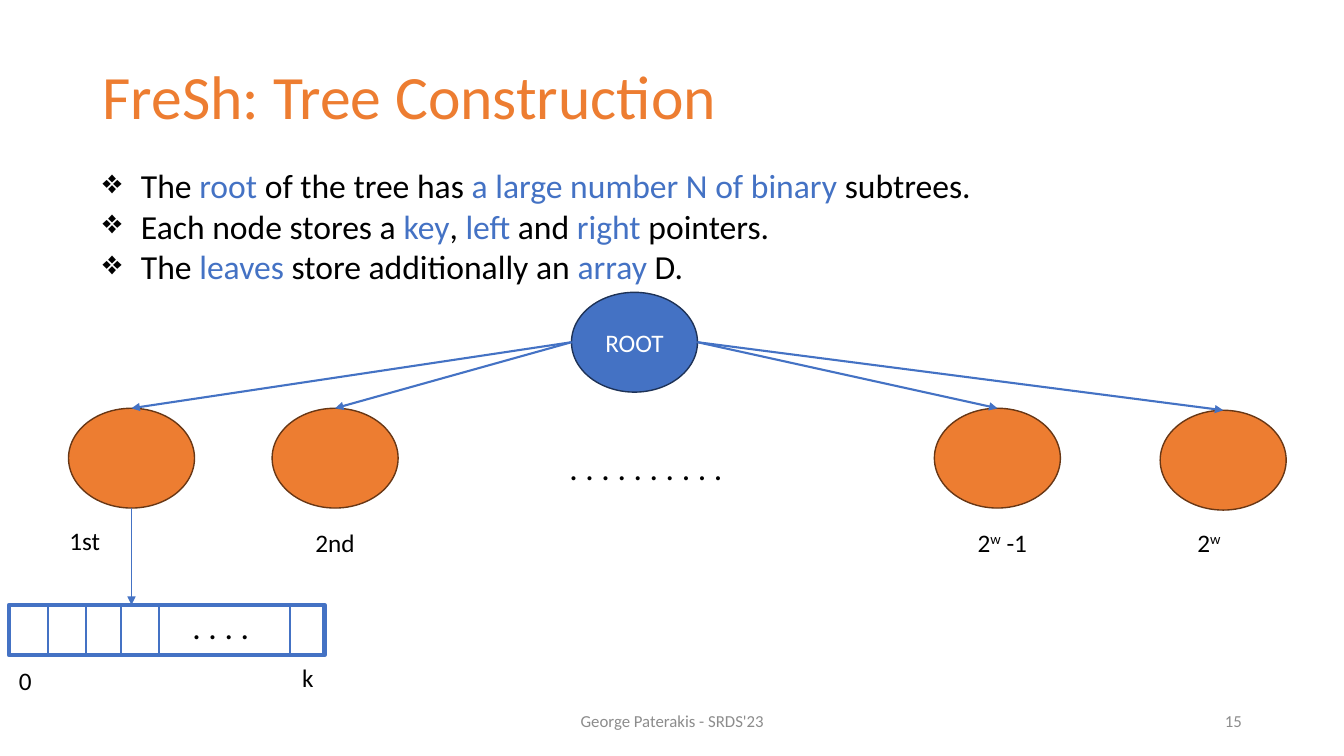
import dataclasses
import typing

import lxml.etree
import pptx
import pptx.dml.color
import pptx.enum.shapes
import pptx.enum.text
import pptx.oxml.ns
import pptx.util

RGB = pptx.dml.color.RGBColor
BLUE = RGB(0x44, 0x72, 0xC4)
DARK_BLUE = RGB(0x1E, 0x32, 0x56)
ORANGE = RGB(0xED, 0x7D, 0x31)
DARK_ORANGE = RGB(0x68, 0x37, 0x15)
BLACK = RGB(0, 0, 0)
WHITE = RGB(0xFF, 0xFF, 0xFF)
GREY = RGB(0x8C, 0x8C, 0x8C)

WIDTH = pptx.util.Inches(13.33)
HEIGHT = pptx.util.Inches(7.5)
COLUMNS, ROWS = 40, 30
NODE_W, NODE_H = 3.75, 3.96
ARRAY_TOP, ARRAY_H = 24, 2

ALIGN = pptx.enum.text.PP_ALIGN
ANCHOR = pptx.enum.text.MSO_ANCHOR
SHAPE = pptx.enum.shapes.MSO_SHAPE


@dataclasses.dataclass(frozen=True)
class Run:
    text: str
    color: RGB = BLACK
    raised: bool = False


@dataclasses.dataclass(frozen=True)
class Box:
    x: float
    y: float
    w: float
    h: float


@dataclasses.dataclass(frozen=True)
class Label:
    box: Box
    lines: list[list[Run]]
    size: int = 18
    align: ALIGN = ALIGN.LEFT
    anchor: ANCHOR = ANCHOR.TOP
    wrap: bool = False
    bullet: str = ""
    spacing: float = 1.0


@dataclasses.dataclass(frozen=True)
class Node:
    x: float
    y: float
    fill: RGB = ORANGE
    outline: RGB = DARK_ORANGE

    @property
    def middle(self) -> float:
        return self.x + NODE_W / 2


ROOT = Node(17.01, 11.6, BLUE, DARK_BLUE)
CHILDREN = [Node(2.04, 16.2), Node(8.1, 16.2), Node(27.81, 16.2), Node(34.53, 16.28)]
ARRAY = Box(0.27, ARRAY_TOP, 9.39, ARRAY_H)
DIVIDERS = [1.44, 2.55, 3.6, 4.74, 8.64]

LABELS = [
    Label(Box(2.76, 1.04, 34.5, 5.8), [[Run("FreSh: Tree Construction", ORANGE)]],
          44, anchor=ANCHOR.MIDDLE, wrap=True, spacing=0.9),
    Label(Box(2.76, 6.36, 26.67, 5.24), [
        [Run("The "), Run("root", BLUE), Run(" of the tree has "),
         Run("a large number N of binary ", BLUE), Run("subtrees.")],
        [Run("Each node stores a "), Run("key", BLUE), Run(", "), Run("left", BLUE),
         Run(" and "), Run("right", BLUE), Run(" pointers.")],
        [Run("The "), Run("leaves", BLUE), Run(" store additionally an "),
         Run("array", BLUE), Run(" D.")],
    ], 24, bullet="❖"),
    Label(Box(1.77, 20.64, 1.53, 1.6), [[Run("1st")]]),
    Label(Box(9.09, 20.72, 1.8, 1.6), [[Run("2nd")]]),
    Label(Box(28.8, 20.72, 2.13, 1.6), [[Run("2"), Run("w", raised=True), Run(" -1")]]),
    Label(Box(35.34, 20.72, 1.35, 1.6), [[Run("2"), Run("w", raised=True)]]),
    Label(Box(16.65, 17.52, 5.16, 2), [[Run(". . . . . . . . . .")]], 24),
    Label(Box(5.43, 23.84, 2.7, 2), [[Run(". . . .")]], 24, wrap=True),
    Label(Box(0.27, 26.2, 1, 1.6), [[Run("0")]]),
    Label(Box(8.7, 26.08, 0.96, 1.6), [[Run("k")]]),
    Label(Box(13.26, 27.8, 13.5, 1.6), [[Run("George Paterakis - SRDS'23", GREY)]],
          12, ALIGN.CENTER, ANCHOR.MIDDLE, True),
    Label(Box(28.26, 27.8, 9, 1.6), [[Run("15", GREY)]],
          12, ALIGN.RIGHT, ANCHOR.MIDDLE, True),
]


def col(n: float) -> int:
    return round(WIDTH * n / COLUMNS)


def row(n: float) -> int:
    return round(HEIGHT * n / ROWS)


def place(box: Box) -> tuple[int, int, int, int]:
    return col(box.x), row(box.y), col(box.w), row(box.h)


def add_run(p: typing.Any, run: Run, size: int) -> None:
    r = p.add_run()
    r.text = run.text
    r.font.name = "Calibri"
    r.font.size = pptx.util.Pt(size)
    r.font.color.rgb = run.color
    if run.raised:
        r._r.get_or_add_rPr().set("baseline", "30000")


def add_bullet(p: typing.Any, char: str) -> None:
    props = p._p.get_or_add_pPr()
    indent = pptx.util.Inches(0.38)
    props.set("marL", str(indent))
    props.set("indent", str(-indent))
    lxml.etree.SubElement(props, pptx.oxml.ns.qn("a:buChar")).set("char", char)


def add_label(s: typing.Any, label: Label) -> None:
    tf = s.shapes.add_textbox(*place(label.box)).text_frame
    tf.word_wrap = label.wrap
    tf.vertical_anchor = label.anchor
    for i, line in enumerate(label.lines):
        p = tf.add_paragraph() if i else tf.paragraphs[0]
        p.alignment = label.align
        p.line_spacing = label.spacing
        if label.bullet:
            add_bullet(p, label.bullet)
        for run in line:
            add_run(p, run, label.size)


def add_outlined(s: typing.Any, kind: SHAPE, box: Box, outline: RGB,
                 weight: float, fill: RGB | None = None) -> typing.Any:
    sp = s.shapes.add_shape(kind, *place(box))
    sp.shadow.inherit = False
    if fill is None:
        sp.fill.background()
    else:
        sp.fill.solid()
        sp.fill.fore_color.rgb = fill
    sp.line.color.rgb = outline
    sp.line.width = pptx.util.Pt(weight)
    return sp


def add_node(s: typing.Any, node: Node) -> typing.Any:
    box = Box(node.x, node.y, NODE_W, NODE_H)
    return add_outlined(s, SHAPE.OVAL, box, node.outline, 1, node.fill)


def add_line(s: typing.Any, start: tuple[float, float], end: tuple[float, float],
             weight: float = 1.5, arrow: bool = True) -> None:
    line = s.shapes.add_connector(
        pptx.enum.shapes.MSO_CONNECTOR.STRAIGHT,
        col(start[0]), row(start[1]), col(end[0]), row(end[1]))
    line.line.color.rgb = BLUE
    line.line.width = pptx.util.Pt(weight)
    if arrow:
        ln = line.line._get_or_add_ln()
        lxml.etree.SubElement(ln, pptx.oxml.ns.qn("a:tailEnd")).set("type", "triangle")
    lxml.etree.SubElement(line._element.spPr, pptx.oxml.ns.qn("a:effectLst"))


def main() -> None:
    prs = pptx.Presentation()
    prs.slide_width, prs.slide_height = WIDTH, HEIGHT
    s = prs.slides.add_slide(prs.slide_layouts[6])

    root = add_node(s, ROOT)
    p = root.text_frame.paragraphs[0]
    p.alignment = ALIGN.CENTER
    root.text_frame.vertical_anchor = ANCHOR.MIDDLE
    add_run(p, Run("ROOT", WHITE), 18)

    for child in CHILDREN:
        add_node(s, child)
        side = ROOT.x if child.x < ROOT.x else ROOT.x + NODE_W
        add_line(s, (side, ROOT.y + NODE_H / 2), (child.middle, child.y))

    first = CHILDREN[0]
    add_line(s, (first.middle, first.y + NODE_H), (first.middle, ARRAY_TOP), 0.5)
    add_outlined(s, SHAPE.RECTANGLE, ARRAY, BLUE, 3)
    for x in DIVIDERS:
        add_line(s, (x, ARRAY_TOP), (x, ARRAY_TOP + ARRAY_H), arrow=False)

    for label in LABELS:
        add_label(s, label)
    prs.save("out.pptx")


if __name__ == "__main__":
    main()
